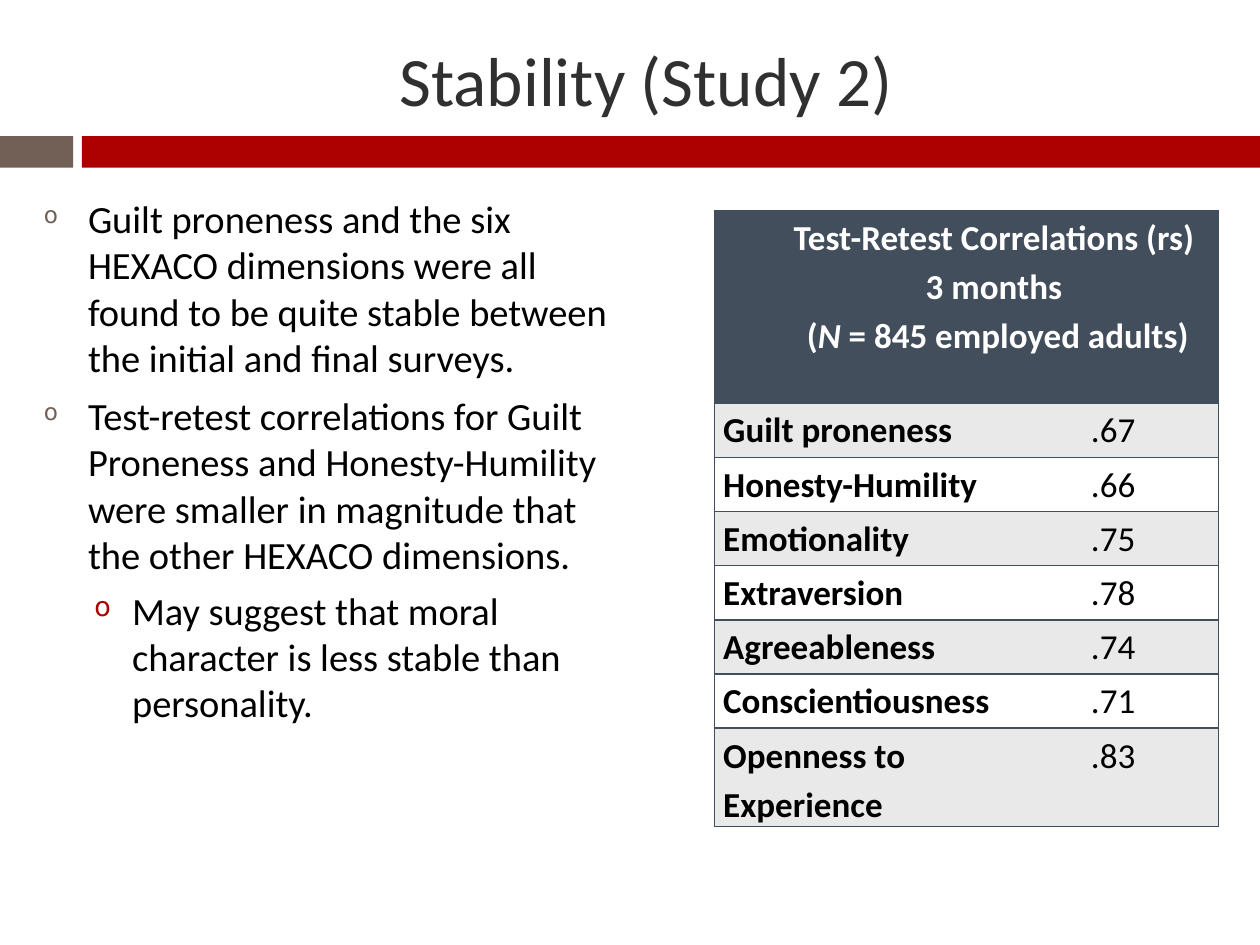
import pptx
import pptx.util
import pptx.dml.color
import pptx.enum.shapes
import pptx.enum.text
import pptx.oxml.ns
import lxml.etree

Inches = pptx.util.Inches
Pt = pptx.util.Pt
ALIGN = pptx.enum.text.PP_ALIGN
ANCHOR = pptx.enum.text.MSO_ANCHOR

COLORS = {
    "title": "303030",
    "text": "000000",
    "white": "FFFFFF",
    "taupe": "726056",
    "red": "AD0101",
    "slate": "424E5B",
    "band": "E9E9EA",
}
BULLETS = [
    (0, "Guilt proneness and the six HEXACO dimensions were all found to be quite "
        "stable between the initial and final surveys."),
    (0, "Test-retest correlations for Guilt Proneness and Honesty-Humility were "
        "smaller in magnitude that the other HEXACO dimensions."),
    (1, "May suggest that moral character is less stable than personality."),
]
LEVELS = [
    {"indent": 0.35, "hang": 0.35, "before": 7, "color": "taupe", "size": 60},
    {"indent": 0.7, "hang": 0.3, "before": 5.5, "color": "red", "size": 70},
]
HEADER = [
    [("Test-Retest Correlations (rs) ", False)],
    [("3 months ", False)],
    [("(", False), ("N", True), (" = 845 employed adults)", False)],
]
CORRELATIONS = [
    ("Guilt proneness", ".67"),
    ("Honesty-Humility", ".66"),
    ("Emotionality", ".75"),
    ("Extraversion", ".78"),
    ("Agreeableness", ".74"),
    ("Conscientiousness", ".71"),
    ("Openness to Experience", ".83"),
]


def rgb(name):
    return pptx.dml.color.RGBColor.from_string(COLORS[name])


def child(parent, tag, **attrs):
    el = lxml.etree.SubElement(parent, pptx.oxml.ns.qn(tag))
    for key, value in attrs.items():
        el.set(key, str(value))
    return el


class SlideBuilder:
    font = "Calibri"

    def __init__(self, slide):
        self.s = slide

    def run(self, p, text, size, color="text", bold=False, italic=False):
        r = p.add_run()
        r.text = text
        r.font.name = self.font
        r.font.size = Pt(size)
        r.font.bold = bold
        r.font.italic = italic
        r.font.color.rgb = rgb(color)

    def paragraph(self, tf, index):
        return tf.paragraphs[0] if index == 0 else tf.add_paragraph()

    def bar(self, left, width, color):
        sp = self.s.shapes.add_shape(
            pptx.enum.shapes.MSO_SHAPE.RECTANGLE,
            Inches(left), Inches(1.08), Inches(width), Inches(0.25))
        sp.shadow.inherit = False
        sp.fill.solid()
        sp.fill.fore_color.rgb = rgb(color)
        sp.line.fill.background()

    def title(self, text):
        sp = self.s.shapes.title
        sp.left, sp.top = Inches(0.67), Inches(0.25)
        sp.width, sp.height = Inches(8.92), Inches(0.75)
        tf = sp.text_frame
        tf.auto_size = pptx.enum.text.MSO_AUTO_SIZE.NONE
        tf.vertical_anchor = ANCHOR.MIDDLE
        p = tf.paragraphs[0]
        p.alignment = ALIGN.CENTER
        self.run(p, text, 39.6, "title")

    def bullets(self, items):
        sp = self.s.shapes.add_textbox(
            Inches(0.25), Inches(1.5), Inches(4.75), Inches(5.58))
        tf = sp.text_frame
        tf.word_wrap = True
        for i, (level, text) in enumerate(items):
            style = LEVELS[level]
            p = self.paragraph(tf, i)
            p.level = level
            p.space_before = Pt(style["before"])
            pPr = p._p.get_or_add_pPr()
            pPr.set("marL", str(Inches(style["indent"])))
            pPr.set("indent", str(-Inches(style["hang"])))
            child(child(pPr, "a:buClr"), "a:srgbClr", val=COLORS[style["color"]])
            child(pPr, "a:buSzPct", val=style["size"] * 1000)
            child(pPr, "a:buChar", char="o")
            self.run(p, text, 22)

    def cell(self, cell, lines, fill, borders, color="text", bold=False,
             align=ALIGN.LEFT, indent=0):
        cell.margin_left = cell.margin_right = Inches(0.07)
        cell.margin_top = cell.margin_bottom = 0
        cell.vertical_anchor = ANCHOR.TOP
        tcPr = cell._tc.get_or_add_tcPr()
        for side in "LRTB":
            ln = child(tcPr, f"a:ln{side}", w=Pt(1))
            if side in borders:
                child(child(ln, "a:solidFill"), "a:srgbClr", val=COLORS["slate"])
            else:
                child(ln, "a:noFill")
        cell.fill.solid()
        cell.fill.fore_color.rgb = rgb(fill)
        for i, runs in enumerate(lines):
            p = self.paragraph(cell.text_frame, i)
            p.alignment = align
            p.line_spacing = 1.15
            p._p.get_or_add_pPr().set("marL", str(Inches(indent)))
            for text, italic in runs:
                self.run(p, text, 20, color, bold, italic)

    def table(self, header, rows):
        heights = [1.53] + [0.43] * (len(rows) - 1) + [0.78]
        frame = self.s.shapes.add_table(
            len(heights), 2, Inches(5.67), Inches(1.67),
            Inches(4), Inches(sum(heights)))
        table = frame.table
        table.first_row = False
        table.horz_banding = False
        for column, width in zip(table.columns, (2.33, 1.67)):
            column.width = Inches(width)
        for row, height in zip(table.rows, heights):
            row.height = Inches(height)
        table.cell(0, 0).merge(table.cell(0, 1))
        self.cell(table.cell(0, 0), header, "slate", "LRTB", "white", True,
                  ALIGN.CENTER, 0.5)
        for i, (label, value) in enumerate(rows, 1):
            fill = "band" if i % 2 else "white"
            self.cell(table.cell(i, 0), [[(label, False)]], fill, "LTB", bold=True)
            self.cell(table.cell(i, 1), [[(value, False)]], fill, "RTB",
                      align=ALIGN.CENTER)


def main():
    prs = pptx.Presentation()
    prs.slide_width, prs.slide_height = Inches(10), Inches(7.5)
    builder = SlideBuilder(prs.slides.add_slide(prs.slide_layouts[5]))
    builder.bar(0, 0.58, "taupe")
    builder.bar(0.65, 9.35, "red")
    builder.bullets(BULLETS)
    builder.title("Stability (Study 2)")
    builder.table(HEADER, CORRELATIONS)
    prs.save("out.pptx")


if __name__ == "__main__":
    main()
